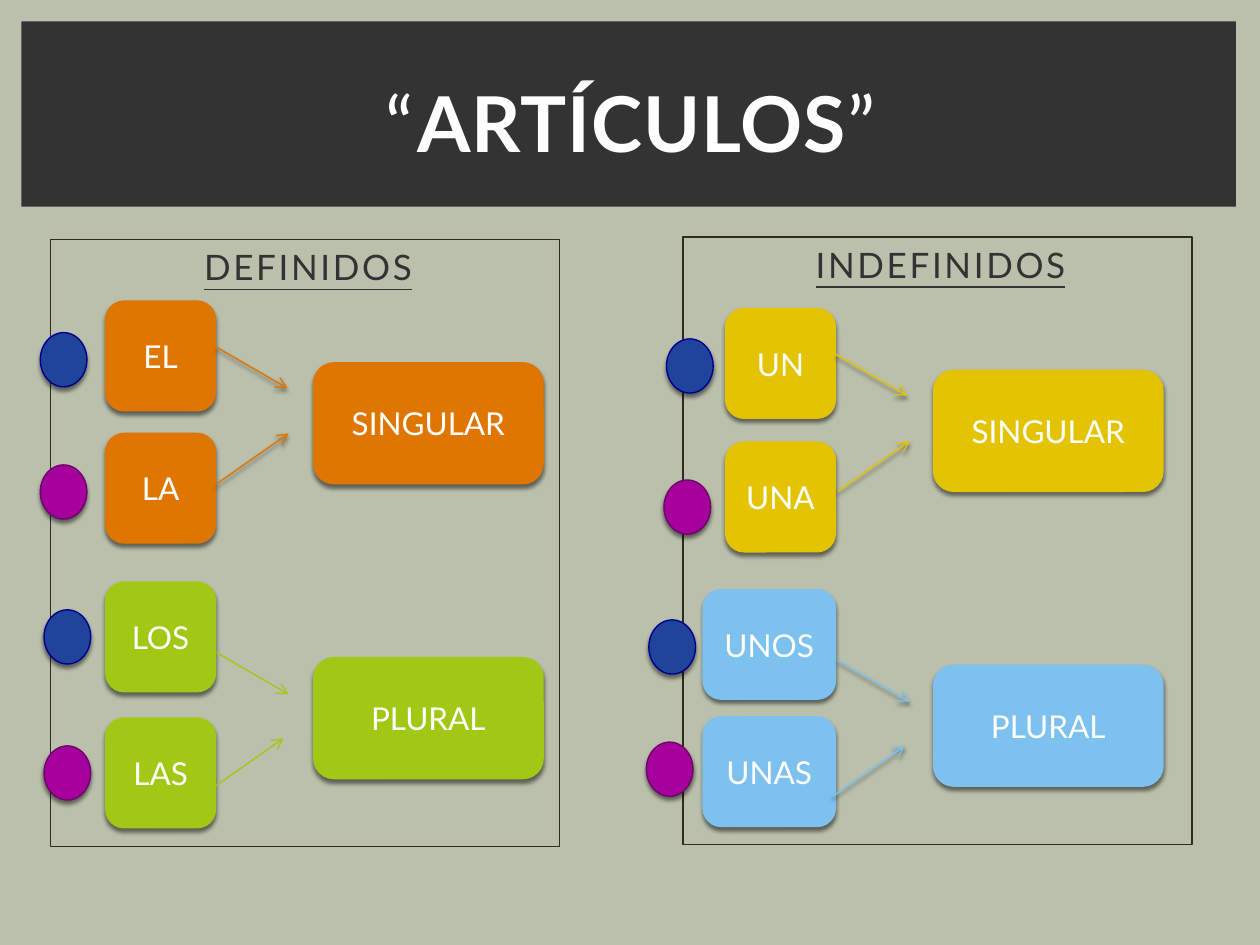
import dataclasses

import pptx
import pptx.dml.color
import pptx.enum.shapes
import pptx.enum.text
import pptx.oxml
import pptx.oxml.ns
import pptx.util

Inches = pptx.util.Inches
Pt = pptx.util.Pt
KIND = pptx.enum.shapes.MSO_SHAPE
ANCHOR = pptx.enum.text.MSO_ANCHOR
NS = pptx.oxml.ns.nsdecls("a")


@dataclasses.dataclass(frozen=True)
class Theme:
    font: str = "Lato"
    back: str = "BBC0AC"
    dark: str = "333333"
    frame: str = "2F2B20"
    white: str = "FFFFFF"
    bright: str = "FEFEFE"
    edge: str = "96A760"
    orange: str = "E07602"
    green: str = "A2C816"
    yellow: str = "E4C402"
    sky: str = "7DC1EF"
    blue: tuple = ("21449B", "000090")
    purple: tuple = ("A6009D", "6D0668")
    title: int = 44
    head: int = 20
    label: int = 18
    thin: float = 0.79


T = Theme()

# Each word: text, top, and left and top of its dot, all from the main box.
PANELS = [
    dict(box=(0.4, 1.9, 4.04, 4.82), head="DEFINIDOS", main=(2.09, 0.98), groups=[
        dict(name="SINGULAR", color=T.orange, width=0.87, shadow=True,
             words=[("EL", -0.49, -2.17, -0.24), ("LA", 0.56, -2.17, 0.81)],
             arrows=[(-0.78, -0.13), (-0.77, 0.96)]),
        dict(name="PLURAL", color=T.green, width=0.87, shadow=False,
             words=[("LOS", -0.6, -2.14, -0.38), ("LAS", 0.48, -2.14, 0.7)],
             arrows=[(-0.77, -0.04), (-0.81, 1.04)])]),
    dict(box=(5.42, 1.88, 4.04, 4.82), head="INDEFINIDOS", main=(1.99, 1.06), groups=[
        dict(name="SINGULAR", color=T.yellow, width=0.87, shadow=True,
             words=[("UN", -0.49, -2.12, -0.25), ("UNA", 0.57, -2.14, 0.87)],
             arrows=[(-0.78, -0.13), (-0.76, 0.96)]),
        dict(name="PLURAL", color=T.sky, width=1.05, shadow=True,
             words=[("UNOS", -0.6, -2.26, -0.36), ("UNAS", 0.41, -2.28, 0.61)],
             arrows=[(-0.76, -0.04), (-0.8, 1.04)])]),
]


def rgb(code):
    return pptx.dml.color.RGBColor.from_string(code)


def place(shape, box):
    shape.left, shape.top, shape.width, shape.height = map(Inches, box)


def write(frame, text, size, color=T.white, bold=False, line=False,
          space=0, edge=None, anchor=ANCHOR.MIDDLE):
    """Add a formatted run to the first paragraph of a text frame."""
    frame.word_wrap = True
    frame.auto_size = pptx.enum.text.MSO_AUTO_SIZE.NONE
    frame.vertical_anchor = anchor
    para = frame.paragraphs[0]
    para.alignment = pptx.enum.text.PP_ALIGN.CENTER
    run = para.add_run()
    run.text = text
    font = run.font
    font.name, font.size = T.font, Pt(size)
    font.bold, font.underline = bold, line
    font.color.rgb = rgb(color)
    props = run._r.get_or_add_rPr()
    if space:
        props.set("spc", str(int(space * 100)))
    if edge:
        props.insert(0, pptx.oxml.parse_xml(
            f'<a:ln {NS} w="12700"><a:solidFill><a:srgbClr val="{edge}"/>'
            '</a:solidFill></a:ln>'))


def shade(shape, on=True):
    """Put an own effect list, with a soft shadow or none, on a shape."""
    props = shape._element.spPr
    old = props.find(pptx.oxml.ns.qn("a:effectLst"))
    if old is not None:
        props.remove(old)
    drop = ('<a:outerShdw blurRad="31750" dist="25400" dir="5400000" rotWithShape="0">'
            '<a:srgbClr val="000000"><a:alpha val="50000"/></a:srgbClr>'
            '</a:outerShdw>') if on else ""
    props.append(pptx.oxml.parse_xml(f"<a:effectLst {NS}>{drop}</a:effectLst>"))


def draw(slide, kind, box, fill, line=None, shadow=True):
    shape = slide.shapes.add_shape(kind, *map(Inches, box))
    shape.shadow.inherit = False
    shape.fill.solid()
    shape.fill.fore_color.rgb = rgb(fill)
    if line:
        shape.line.color.rgb = rgb(line)
        shape.line.width = Pt(T.thin)
    else:
        shape.line.fill.background()
    shade(shape, shadow)
    return shape


def block(slide, box, text, color):
    shape = draw(slide, KIND.ROUNDED_RECTANGLE, box, color, color)
    write(shape.text_frame, text, T.label)


def arrow(slide, start, end, color, shadow):
    link = slide.shapes.add_connector(
        pptx.enum.shapes.MSO_CONNECTOR.STRAIGHT, *map(Inches, start + end))
    link.line.color.rgb = rgb(color)
    link.line.width = Pt(T.thin)
    link.line._get_or_add_ln().append(
        pptx.oxml.parse_xml(f'<a:tailEnd {NS} type="arrow"/>'))
    shade(link, shadow)


def group(slide, x, y, name, color, width, shadow, words, arrows):
    """Place a main box at x, y with the two words that point to it."""
    for text, top, _, _ in words:
        block(slide, (x - 0.78 - width, y + top, width, 0.87), text, color)
    block(slide, (x, y, 1.82, 0.96), name, color)
    for (dx, dy), rise in zip(arrows, (0.33, -0.4)):
        start = (x + dx, y + dy)
        arrow(slide, start, (start[0] + 0.57, start[1] + rise), color, shadow)
    for (_, _, dx, dy), (fill, line) in zip(words, (T.blue, T.purple)):
        draw(slide, KIND.OVAL, (x + dx, y + dy, 0.37, 0.43), fill, line)


def panel(slide, body, box, head, main, groups):
    place(body, box)
    body.line.color.rgb = rgb(T.frame)
    body.line.width = Pt(0.75)
    write(body.text_frame, head, T.head, color=T.dark, line=True, space=1.5,
          anchor=ANCHOR.TOP)
    props = body.text_frame.paragraphs[0]._p.get_or_add_pPr()
    props.set("marL", str(Inches(0.05)))
    props.set("indent", "0")
    props.append(pptx.oxml.parse_xml(f"<a:buNone {NS}/>"))
    for i, item in enumerate(groups):
        group(slide, box[0] + main[0], box[1] + main[1] + 2.34 * i, **item)


def banner(slide, box):
    x, y, wide, _ = box
    band = draw(slide, KIND.RECTANGLE, box, T.dark, shadow=False)
    slide.shapes._spTree.insert(2, band._element)
    title = slide.shapes.title
    place(title, (x + 0.25, y + 0.22, wide - 0.47, 1.15))
    frame = title.text_frame
    write(frame, "“", T.title, space=2)
    write(frame, "ARTÍCULOS", T.title, color=T.bright, bold=True, space=0.5,
          edge=T.edge)
    write(frame, "”", T.title, space=2)


def main():
    deck = pptx.Presentation()
    deck.slide_width, deck.slide_height = Inches(10), Inches(7.5)
    slide = deck.slides.add_slide(deck.slide_layouts[3])
    slide.background.fill.solid()
    slide.background.fill.fore_color.rgb = rgb(T.back)
    banner(slide, (0.17, 0.17, 9.64, 1.47))
    for spot, data in zip((1, 2), PANELS):
        panel(slide, slide.placeholders[spot], **data)
    deck.save("out.pptx")


if __name__ == "__main__":
    main()
